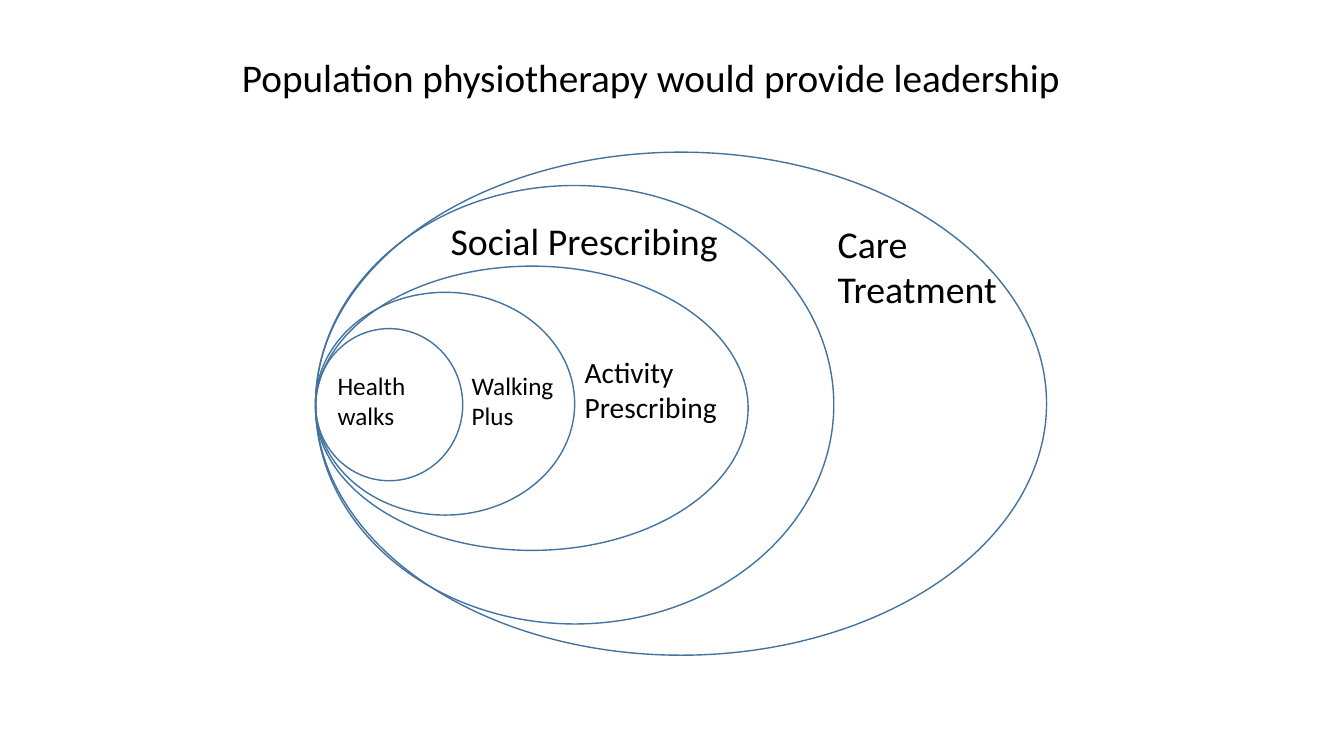
"""Nested ellipses showing how prescribing schemes sit inside one another."""
from typing import NamedTuple

from pptx import Presentation, util as u
from pptx.dml.color import RGBColor
from pptx.enum import shapes, text

PX = u.Inches(1) // 100
RING_LEFT = 313


class Ring(NamedTuple):
    """An ellipse that starts at the shared left edge."""
    top: int
    width: int
    height: int


class Label(NamedTuple):
    """A text box and its wording."""
    left: int
    top: int
    width: int
    height: int
    words: str
    size: int


RINGS = [
    Ring(184, 514, 435),
    Ring(264, 429, 282),
    Ring(326, 146, 151),
    Ring(290, 257, 221),
    Ring(151, 725, 499),
]

LABELS = [
    Label(437, 211, 355, 56, "Social Prescribing", 27),
    Label(570, 346, 216, 81, "Activity\nPrescribing", 21),
    Label(325, 362, 96, 71, "Health \vwalks", 18),
    Label(458, 362, 111, 71, "Walking\nPlus", 18),
    Label(821, 214, 190, 101, "Care\nTreatment", 27),
]

TITLE = Label(230, 48, 1081, 57, "Population physiotherapy would provide leadership", 28)


def px(length: int) -> u.Emu:
    """Turn px into EMU."""
    return u.Emu(length * PX)


def colour(code: str) -> RGBColor:
    """Turn a hex string into a colour."""
    return RGBColor.from_string(code)


def write(box, words: str, *, size: int, font: str = "Calibri", ink: str = "000000") -> None:
    """Fill a box with left-aligned text, one paragraph a line."""
    frame = box.text_frame
    frame.text = words
    frame.word_wrap = True
    frame.auto_size = text.MSO_AUTO_SIZE.SHAPE_TO_FIT_TEXT
    frame.vertical_anchor = text.MSO_ANCHOR.TOP
    for para in frame.paragraphs:
        para.alignment = text.PP_ALIGN.LEFT
        for span in para.runs:
            span.font.name = font
            span.font.size = u.Pt(size)
            span.font.color.rgb = colour(ink)


def draw_ring(page, ring: Ring) -> None:
    """Draw one unfilled ellipse."""
    oval = page.shapes.add_shape(
        shapes.MSO_SHAPE.OVAL, px(RING_LEFT), px(ring.top), px(ring.width), px(ring.height))
    oval.shadow.inherit = False
    oval.fill.background()
    oval.line.color.rgb = colour("43739E")
    oval.line.width = u.Pt(1)


def draw_label(page, label: Label) -> None:
    """Draw one text box."""
    box = page.shapes.add_textbox(
        px(label.left), px(label.top), px(label.width), px(label.height))
    write(box, label.words, size=label.size)


def place_title(page, label: Label) -> None:
    """Move and fill the title placeholder."""
    title = page.shapes.title
    title.left, title.top = px(label.left), px(label.top)
    title.width, title.height = px(label.width), px(label.height)
    write(title, label.words, size=label.size)


def main() -> None:
    """Build and save the deck."""
    deck = Presentation()
    deck.slide_width, deck.slide_height = px(1333), px(750)
    page = deck.slides.add_slide(deck.slide_layouts.get_by_name("Title Only"))
    place_title(page, TITLE)
    for ring in RINGS:
        draw_ring(page, ring)
    for label in LABELS:
        draw_label(page, label)
    deck.save("out.pptx")


if __name__ == "__main__":
    main()
